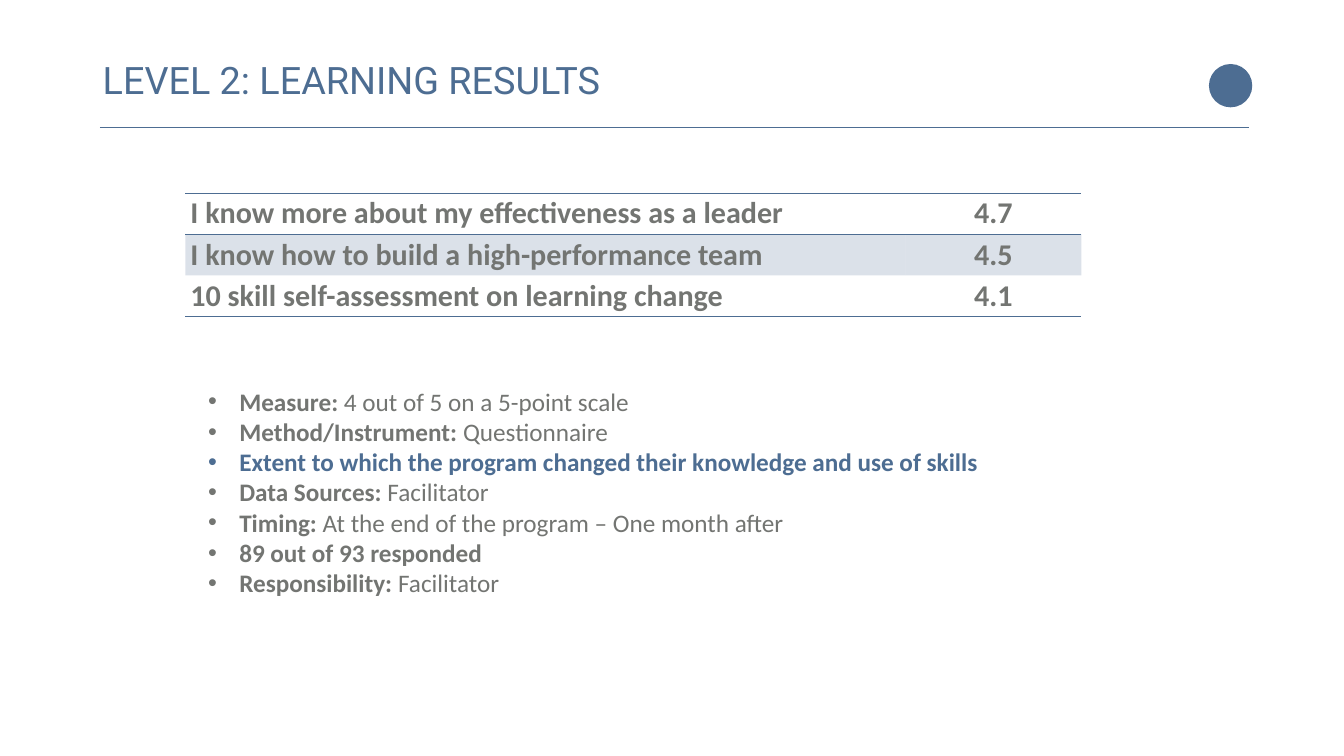
import pptx
import pptx.dml.color
import pptx.enum.shapes
import pptx.enum.text
import pptx.oxml
import pptx.oxml.ns
import pptx.util
from pptx.util import Inches

COLORS = {"blue": "4D6D92", "gray": "737572"}
BODY_FONT = "Calibri"

RESULTS = [
    ("I know more about my effectiveness as a leader", "4.7"),
    ("I know how to build a high-performance team", "4.5"),
    ("10 skill self-assessment on learning change", "4.1"),
]
# (bold part, regular part, colour)
DETAILS = [
    ("Measure: ", "4 out of 5 on a 5-point scale", "gray"),
    ("Method/Instrument: ", "Questionnaire", "gray"),
    ("Extent to which the program changed their knowledge and use of skills", "", "blue"),
    ("Data Sources: ", "Facilitator", "gray"),
    ("Timing: ", "At the end of the program – One month after", "gray"),
    ("89 out of 93 responded", "", "gray"),
    ("Responsibility: ", "Facilitator", "gray"),
]


def rgb(name):
    return pptx.dml.color.RGBColor.from_string(COLORS[name])


def add_run(paragraph, text, size, color, font=BODY_FONT, bold=False):
    run = paragraph.add_run()
    run.text = text
    run.font.size = pptx.util.Pt(size)
    run.font.name = font
    run.font.bold = bold
    run.font.color.rgb = rgb(color)


def add_child(parent, tag, **attributes):
    child = pptx.oxml.ns.qn(tag)
    child = parent.makeelement(child, attributes)
    parent.append(child)
    return child


def set_borders(cell, ruled_sides):
    """Draw a blue rule on the given sides (of "LRTB") and none on the others."""
    properties = cell._tc.get_or_add_tcPr()
    for side in "LRTB":
        border = add_child(properties, f"a:ln{side}", w=str(pptx.util.Pt(1)))
        if side in ruled_sides:
            fill = add_child(border, "a:solidFill")
            add_child(fill, "a:srgbClr", val=COLORS["blue"])
        else:
            add_child(border, "a:noFill")


def fill_cell(cell, shaded):
    if not shaded:
        cell.fill.background()
        return
    cell.fill.solid()
    cell.fill.fore_color.rgb = rgb("blue")
    tint = cell._tc.tcPr.find(".//" + pptx.oxml.ns.qn("a:solidFill") + "[last()]")
    tint = cell._tc.tcPr.findall(pptx.oxml.ns.qn("a:solidFill"))[-1]
    add_child(tint[0], "a:alpha", val="20000")


def add_header(slide, left, top, width):
    dot_size = 0.86
    dot = slide.shapes.add_shape(
        pptx.enum.shapes.MSO_SHAPE.OVAL, Inches(left + width - dot_size + 0.1),
        Inches(top + 0.2), Inches(dot_size), Inches(dot_size))
    dot.shadow.inherit = False
    dot.fill.solid()
    dot.fill.fore_color.rgb = rgb("blue")
    dot.line.fill.background()

    rule_y = Inches(top + 1.46)
    rule = slide.shapes.add_connector(
        pptx.enum.shapes.MSO_CONNECTOR.STRAIGHT, Inches(left + 0.04), rule_y,
        Inches(left + width + 0.04), rule_y)
    rule.line.color.rgb = rgb("blue")
    rule.line.width = pptx.util.Pt(2.25)
    add_child(rule._element.spPr, "a:effectLst")

    title = slide.shapes.add_textbox(
        Inches(left), Inches(top), Inches(18.9), Inches(1.01)).text_frame
    title.word_wrap = True
    add_run(title.paragraphs[0], "LEVEL 2: LEARNING RESULTS", 54, "blue", "Roboto")


def add_results_table(slide, left, top, width, height):
    score_width = 3.49
    table = slide.shapes.add_table(
        len(RESULTS), 2, Inches(left), Inches(top), Inches(width), Inches(height)).table
    table.first_row = False
    table.horz_banding = False
    table.columns[0].width = Inches(width - score_width)
    table.columns[1].width = Inches(score_width)
    ruled_sides = ["TB", "T", "B"]
    for row, result in enumerate(RESULTS):
        for column, text in enumerate(result):
            cell = table.cell(row, column)
            cell.margin_top = cell.margin_bottom = Inches(0.04)
            cell.vertical_anchor = pptx.enum.text.MSO_ANCHOR.MIDDLE
            set_borders(cell, ruled_sides[row])
            fill_cell(cell, shaded=row % 2 == 1)
            paragraph = cell.text_frame.paragraphs[0]
            if column == 1:
                paragraph.alignment = pptx.enum.text.PP_ALIGN.CENTER
            add_run(paragraph, text, 43, "gray", bold=True)


def add_details(slide, left, top, width, height):
    frame = slide.shapes.add_textbox(
        Inches(left), Inches(top), Inches(width), Inches(height)).text_frame
    frame.word_wrap = False
    indent = Inches(0.62)
    for index, (label, value, color) in enumerate(DETAILS):
        paragraph = frame.add_paragraph() if index else frame.paragraphs[0]
        properties = paragraph._p.get_or_add_pPr()
        properties.set("marL", str(indent))
        properties.set("indent", str(-indent))
        add_child(properties, "a:buFont", typeface="Arial")
        add_child(properties, "a:buChar", char="•")
        add_run(paragraph, label, 36, color, bold=True)
        if value:
            add_run(paragraph, value, 36, color)


def main():
    deck = pptx.Presentation()
    deck.slide_width = Inches(26.67)
    deck.slide_height = Inches(15)
    slide = deck.slides.add_slide(deck.slide_layouts[6])
    add_header(slide, 1.94, 1.07, 22.81)
    add_results_table(slide, 3.68, 3.83, 17.78, 2.45)
    add_details(slide, 4.03, 7.61, 15.77, 4.34)
    deck.save("out.pptx")


if __name__ == "__main__":
    main()
